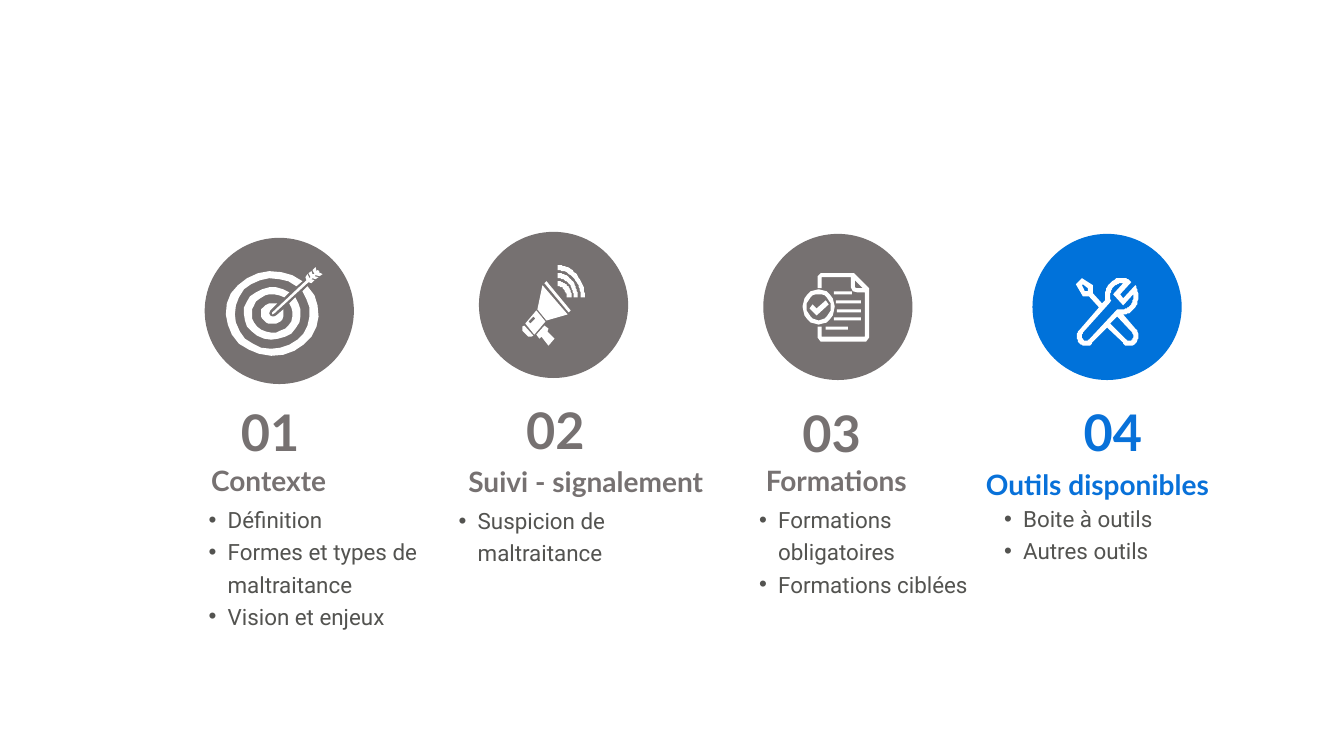
"""Build the four-step agenda slide with its icons, numbers, titles and topics."""
from math import cos, radians, sin

from lxml.etree import SubElement
from pptx import Presentation
from pptx.dml.color import RGBColor
from pptx.enum.shapes import MSO_SHAPE
from pptx.enum.text import MSO_AUTO_SIZE, PP_ALIGN
from pptx.oxml.ns import qn
from pptx.util import Inches, Pt

COLORS = {"grey": "767171", "disc_blue": "0072DA", "text_blue": "0871D9",
          "body": "535350", "white": "FFFFFF"}
GRID = Inches(0.01)
INDENT = Inches(0.19)
LINE_HEIGHT = 0.32


def arc(center, radius, start, end, steps=24):
    """Return points along an elliptical arc, angles in degrees."""
    angles = [radians(start + (end - start) * i / steps) for i in range(steps + 1)]
    return [(center[0] + radius[0] * cos(a), center[1] + radius[1] * sin(a)) for a in angles]


def add_text(place, lines, size, font, color, align=PP_ALIGN.LEFT, bold=False, bullets=False):
    """Add a wrapped text box with one paragraph for each line."""
    box = page.shapes.add_textbox(*[Inches(length) for length in place])
    frame = box.text_frame
    frame.word_wrap = True
    frame.auto_size = MSO_AUTO_SIZE.SHAPE_TO_FIT_TEXT
    for number, line in enumerate(lines):
        para = frame.add_paragraph() if number else frame.paragraphs[0]
        para.text = line
        para.alignment = align
        para.line_spacing = 1.2
        if bullets:
            properties = para._p.get_or_add_pPr()
            properties.set("marL", str(INDENT))
            properties.set("indent", str(-INDENT))
            SubElement(properties, qn("a:buFont")).set("typeface", "Arial")
            SubElement(properties, qn("a:buChar")).set("char", "•")
        for span in para.runs:
            span.font.size = Pt(size)
            span.font.name = font
            span.font.bold = bold
            span.font.color.rgb = RGBColor.from_string(COLORS[color])


bullseye = (270, 311)
target = [
    arc(bullseye, (46, 42), -40, 310) + arc(bullseye, (37.5, 35), 309, -38),
    arc(bullseye, (28.5, 26), -37, 307) + arc(bullseye, (20.5, 19), 305, -33),
    arc(bullseye, (11.5, 10.5), -20, 295)
    + [(268, 308), (267, 311), (268, 313), (270, 314), (272, 314), (274, 313)],
    [(320, 272), (317, 274), (313, 273), (312, 274), (316, 275), (313, 277), (310, 276),
     (309, 277), (312, 278), (309, 281), (306, 280), (272, 311), (270, 311.5), (269.5, 309.5),
     (304, 278), (303, 275), (305, 272), (307, 276), (308, 275), (306, 271), (309, 269),
     (310, 272), (312, 272), (310, 268), (313, 265), (314, 269), (315, 268), (317, 269),
     (316, 270)],
]

sound = (553, 295)
megaphone = [
    [(518, 324), (518, 328), (524, 334), (527, 334), (529, 333), (520, 323)],
    [(541, 319), (530, 332), (521, 321), (532, 308)],
    [(531, 316), (529, 314), (524, 319), (526, 321)],
    [(540, 281), (564, 310), (566, 308), (542, 279)],
    [(533, 307), (542, 318), (563, 312), (538, 283)],
    [(549, 335), (546, 332), (543, 329), (544, 326), (540, 323), (532, 332), (535, 336),
     (537, 334), (544, 343), (550, 336)],
]
for outer, inner in [((14, 16), (9, 11)), ((20, 24), (16, 19)), ((27, 32), (23, 27))]:
    megaphone.append(arc(sound, outer, -90, 0) + arc(sound, inner, 0, -90))

badge = (812, 304.5)
certificate = [
    arc(badge, (16, 17.5), 0, 360),
    arc(badge, (12, 13), 0, 360),
    [(822, 302), (810, 313), (803, 306), (806, 302), (810, 306), (819, 298)],
    [(862, 288), (862, 335), (859, 339), (814, 339), (811, 335), (811, 324), (815, 324),
     (815, 334), (858, 334), (858, 290), (850, 290), (846, 289), (844, 285), (844, 275),
     (815, 275), (815, 286), (811, 286), (811, 274), (814, 271), (847, 271), (862, 286)],
    [(856, 286), (848, 278), (848, 285), (850, 286)],
]
for left, top, right in [(827, 289, 845), (829, 298, 854), (830, 307, 854),
                         (827, 315, 854), (819, 324, 841)]:
    certificate.append([(left, top), (right, top), (right, top + 3), (left, top + 3)])

wrench, left_grip, right_grip = (1112.5, 294), (1077, 333.5), (1120, 333.5)
tools = [
    arc(wrench, (16.5, 18.5), 85, -36) + [(1114, 296), (1111, 292), (1122, 280)]
    + arc(wrench, (16.5, 18.5), -65, -193)
    + [(1093, 301), (1084, 291), (1084, 283), (1073, 276), (1067, 282), (1074, 294),
       (1080, 294), (1090, 305)]
    + arc(left_grip, (9, 10), 224, 44) + [(1098, 325)] + arc(right_grip, (9, 10), 136, -47),
    [(1076, 289), (1073, 283), (1074, 282), (1079, 286), (1079, 289)],
    arc(left_grip, (4, 5), 45, 225) + [(1101, 300)] + arc(wrench, (11.5, 13), 160, 275)
    + [(1104, 292), (1114, 303), (1124, 292)] + arc(wrench, (11.5, 13), -5, 105)
    + [(1108, 307)],
    arc(right_grip, (4, 5), -45, 135) + [(1101, 321), (1108, 314)],
]

stages = [
    ("01", "Contexte", ["Définition", "Formes et types de maltraitance", "Vision et enjeux"],
     4, target, "grey", "grey", (2.03, 2.36), (2.29, 3.81), (1.53, 4.48, 2.27),
     (1.97, 4.92, 2.27)),
    ("02", "Suivi - signalement", ["Suspicion de maltraitance"],
     2, megaphone, "grey", "grey", (4.75, 2.3), (5.12, 3.79), (4.09, 4.49, 3.44),
     (4.45, 4.93, 2.73)),
    ("03", "Formations", ["Formations obligatoires", "Formations ciblées"],
     3, certificate, "grey", "grey", (7.57, 2.32), (7.86, 3.82), (7.16, 4.48, 2.27),
     (7.43, 4.92, 2.43)),
    ("04", "Outils disponibles", ["Boite à outils", "Autres outils"],
     2, tools, "disc_blue", "text_blue", (10.24, 2.32), (10.65, 3.81), (9.56, 4.52, 2.65),
     (9.86, 4.91, 2.03)),
]

deck = Presentation()
deck.slide_width, deck.slide_height = Inches(13.33), Inches(7.5)
page = deck.slides.add_slide(deck.slide_layouts[6])

for (number, title, topics, rows, icon, disc_color, text_color,
     disc_at, number_at, title_at, topics_at) in stages:
    disc = page.shapes.add_shape(MSO_SHAPE.OVAL, *[Inches(v) for v in (*disc_at, 1.48, 1.45)])
    builder = page.shapes.build_freeform(*icon[0][0], scale=GRID)
    for index, contour in enumerate(icon):
        if index:
            builder.move_to(*contour[0])
        builder.add_line_segments(contour[1:], close=True)
    for shape, color in [(disc, disc_color), (builder.convert_to_shape(), "white")]:
        shape.shadow.inherit = False
        shape.fill.solid()
        shape.fill.fore_color.rgb = RGBColor.from_string(COLORS[color])
        shape.line.fill.background()
    add_text((*number_at, 0.86, 0.76), [number], 36, "Lato", text_color, bold=True)
    add_text((*title_at, 0.47), [title], 20, "Lato", text_color, PP_ALIGN.CENTER, bold=True)
    add_text((*topics_at, rows * LINE_HEIGHT + 0.08), topics, 16, "Roboto", "body", bullets=True)

deck.save("out.pptx")
